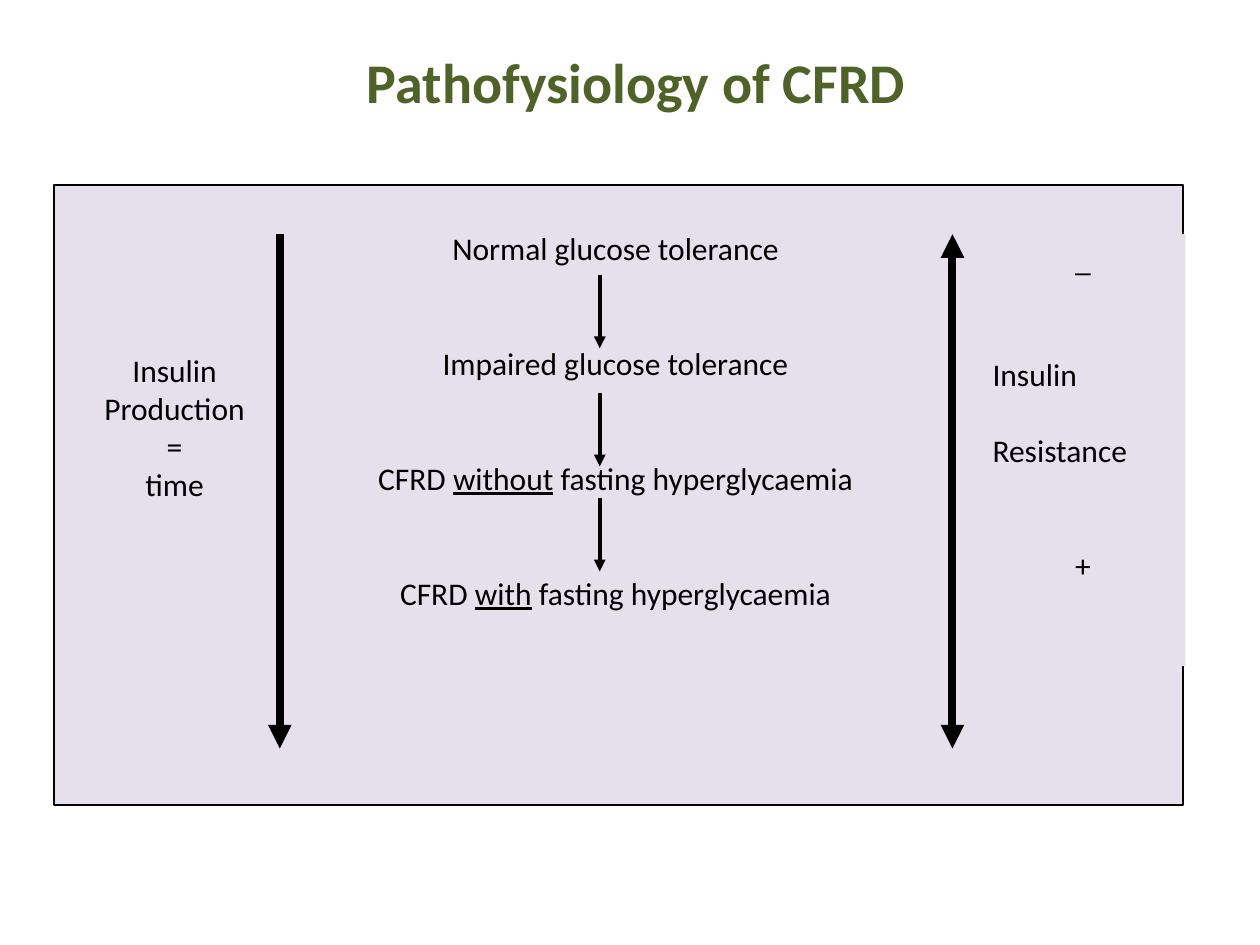
from lxml.etree import SubElement
from pptx import Presentation
from pptx.dml.color import RGBColor
from pptx.enum.shapes import MSO_CONNECTOR, MSO_SHAPE
from pptx.enum.text import MSO_ANCHOR, MSO_AUTO_SIZE, PP_ALIGN
from pptx.oxml.ns import qn
from pptx.util import Cm, Pt

BLACK = RGBColor(0x00, 0x00, 0x00)
LILAC = RGBColor(0xE6, 0xE0, 0xEC)
OLIVE = RGBColor(0x4F, 0x62, 0x28)
FONT = "Calibri"
LINE_PITCH = 22
CENTER, LEFT = PP_ALIGN.CENTER, PP_ALIGN.LEFT

# Each paragraph: runs as (text, underlined), alignment, empty lines above it
HEADING = [([("Pathofysiology of CFRD", False)], LEFT, 0)]
STAGES = [
    ([("Normal glucose tolerance", False)], CENTER, 0),
    ([("Impaired glucose tolerance", False)], CENTER, 2),
    ([("CFRD ", False), ("without", True), (" fasting hyperglycaemia", False)], CENTER, 2),
    ([("CFRD ", False), ("with", True), (" fasting hyperglycaemia", False)], CENTER, 2),
]
PRODUCTION = [([(word, False)], CENTER, 0) for word in ("Insulin", "Production", "=", "time")]
RESISTANCE = [
    ([("_", False)], CENTER, 0),
    ([("Insulin", False)], LEFT, 2),
    ([("Resistance", False)], LEFT, 1),
    ([("+", False)], CENTER, 2),
]

PANEL_BOX = (1.09, 3.73, 22.76, 12.5)
HEADING_BOX = (7.14, 0.84, 11.51, 1.63)
TEXT_BOXES = [
    (STAGES, (6.2, 4.5, 12.42, 9.5), True),
    (PRODUCTION, (1.83, 6.96, 3.38, 3.33), False),
    (RESISTANCE, (19.76, 4.72, 4.14, 8.71), True),
]
STEP_X, STEP_LENGTH = 12.09, 1.48
STEP_TOPS = (5.54, 7.92, 10.04)
TREND_TOP, TREND_LENGTH = 4.72, 10.37
TRENDS = [(5.64, False), (19.2, True)]


def write(shape, paragraphs, size=18, color=BLACK, bold=False, wrap=True):
    frame = shape.text_frame
    frame.word_wrap = wrap
    frame.auto_size = MSO_AUTO_SIZE.NONE
    frame.vertical_anchor = MSO_ANCHOR.TOP
    for index, (runs, align, lines_above) in enumerate(paragraphs):
        paragraph = frame.add_paragraph() if index else frame.paragraphs[0]
        paragraph.alignment = align
        paragraph.space_before = Pt(lines_above * LINE_PITCH)
        for text, underlined in runs:
            run = paragraph.add_run()
            run.text = text
            font = run.font
            font.name, font.size, font.bold = FONT, Pt(size), bold
            font.color.rgb = color
            if underlined:
                font.underline = True


def add_block(slide, box, outlined=False):
    block = slide.shapes.add_shape(MSO_SHAPE.RECTANGLE, *map(Cm, box))
    block.shadow.inherit = False
    block.fill.solid()
    block.fill.fore_color.rgb = LILAC
    if outlined:
        block.line.color.rgb = BLACK
        block.line.width = Pt(0.75)
    else:
        block.line.fill.background()
    return block


def add_down_arrow(slide, x, top, length, weight, both_ends=False):
    arrow = slide.shapes.add_connector(
        MSO_CONNECTOR.STRAIGHT, Cm(x), Cm(top), Cm(x), Cm(top + length))
    arrow.line.color.rgb = BLACK
    arrow.line.width = Pt(weight)
    outline = arrow.line._get_or_add_ln()
    for end in ("a:headEnd", "a:tailEnd") if both_ends else ("a:tailEnd",):
        SubElement(outline, qn(end), type="triangle")
    SubElement(arrow._element.spPr, qn("a:effectLst"))


def main():
    deck = Presentation()
    deck.slide_width, deck.slide_height = Cm(25.4), Cm(19.05)
    slide = deck.slides.add_slide(deck.slide_layouts[5])

    heading = slide.shapes.title
    heading.left, heading.top, heading.width, heading.height = map(Cm, HEADING_BOX)
    write(heading, HEADING, size=32, color=OLIVE, bold=True, wrap=False)

    add_block(slide, PANEL_BOX, outlined=True)
    for paragraphs, box, wrap in TEXT_BOXES:
        write(add_block(slide, box), paragraphs, wrap=wrap)
    for top in STEP_TOPS:
        add_down_arrow(slide, STEP_X, top, STEP_LENGTH, 2.25)
    for x, both_ends in TRENDS:
        add_down_arrow(slide, x, TREND_TOP, TREND_LENGTH, 4.5, both_ends)

    deck.save("out.pptx")


if __name__ == "__main__":
    main()
